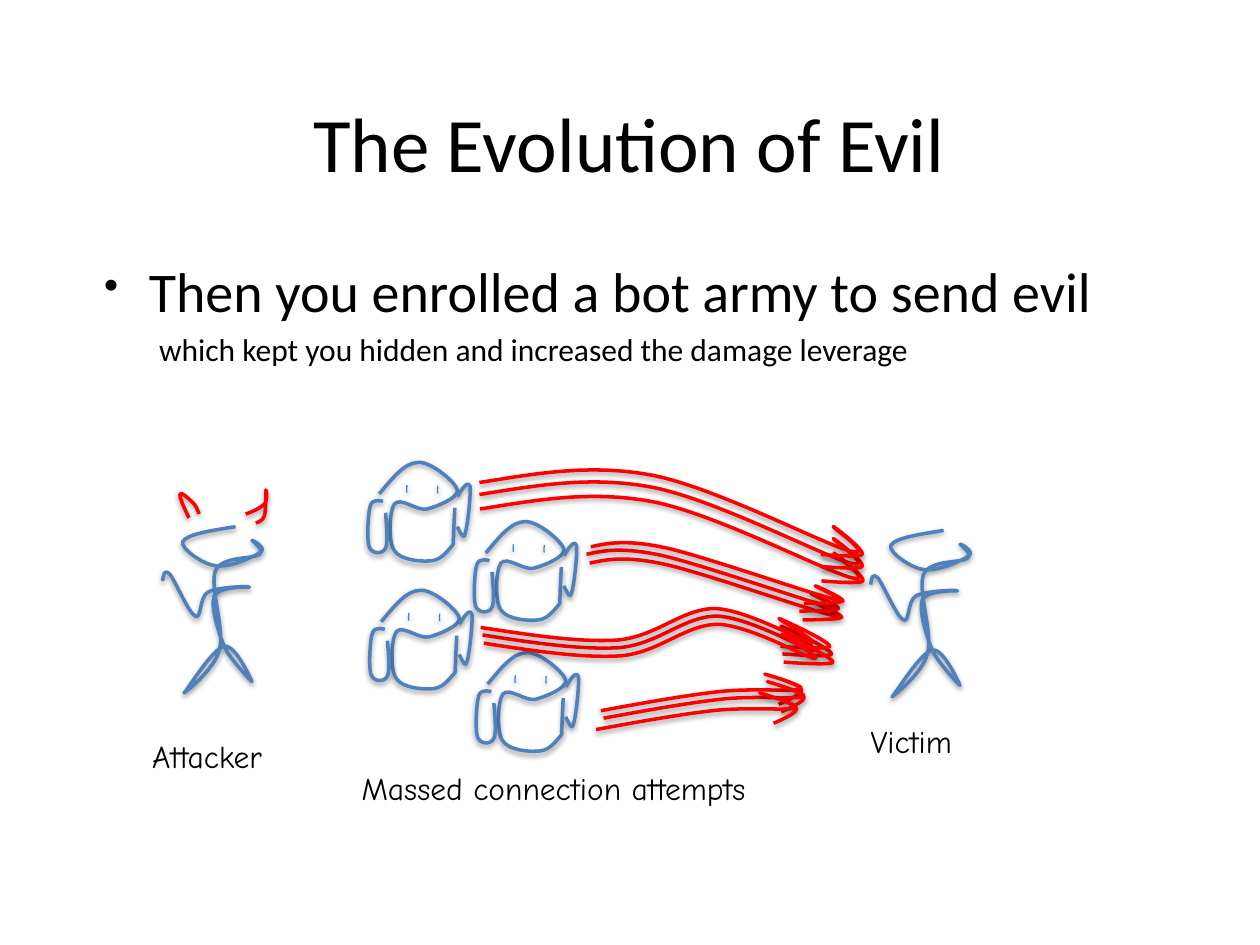
from dataclasses import dataclass

from lxml import etree
from pptx import Presentation
from pptx import util as u
from pptx.dml.color import RGBColor
from pptx.enum import text
from pptx.oxml import ns


@dataclass(frozen=True)
class Theme:
    ink: RGBColor = RGBColor(0, 0, 0)
    figure: RGBColor = RGBColor(0x4F, 0x81, 0xBD)
    eye: RGBColor = RGBColor(0x4B, 0x7E, 0xBC)
    evil: RGBColor = RGBColor(0xFF, 0, 0)
    sans: str = "Calibri"
    hand: str = "Comic Neue"
    title: int = 44
    body: int = 32
    small: int = 18
    pen: float = 2
    thin: float = 0.75


THEME = Theme()
GRID = u.Cm(0.0254)  # sketch coordinates count in this step
CURVE_STEPS = 10

# Each stroke is a start point followed by cubic curves of three points.
PERSON = [
    (187, 418), (168, 421), (148, 424), (145, 430), (143, 435), (161, 448), (171, 449),
    (181, 451), (202, 442), (207, 438), (212, 435), (200, 428), (200, 429),
    (200, 429), (210, 436), (206, 440), (201, 444), (176, 441), (171, 453),
    (166, 466), (179, 500), (174, 516), (170, 532), (146, 550), (146, 550),
    (147, 550), (169, 514), (178, 513), (187, 511), (200, 541), (200, 541),
    (200, 541), (183, 524), (178, 513), (173, 501), (167, 481), (170, 473),
    (174, 465), (199, 466), (198, 466), (197, 465), (172, 466), (165, 470),
    (158, 474), (160, 492), (155, 489), (150, 487), (139, 461), (135, 456),
    (130, 451), (130, 456), (129, 461)]
HORNS = [
    [(150, 411), (146, 403), (142, 394), (143, 392), (144, 390), (151, 397), (154, 400),
     (156, 402), (158, 408), (158, 408)],
    [(195, 408), (201, 406), (207, 403), (210, 400), (213, 396), (211, 387), (211, 389),
     (211, 391), (211, 405), (210, 409), (209, 414), (203, 415), (203, 415)]]
BOT = [
    [(301, 392), (311, 380), (321, 367), (332, 367), (342, 366), (362, 383), (363, 389),
     (364, 395), (347, 402), (339, 404), (331, 406), (318, 394), (313, 400),
     (309, 406), (308, 430), (313, 437), (318, 445), (336, 446), (343, 445),
     (351, 444), (356, 436), (359, 433), (361, 430), (359, 431), (360, 426),
     (360, 421), (361, 403), (361, 403)],
    [(306, 407), (307, 419), (308, 431), (306, 435), (304, 440), (295, 440), (293, 434),
     (291, 429), (292, 407), (294, 401), (296, 395), (304, 398), (304, 398)],
    [(363, 394), (367, 388), (371, 381), (373, 386), (374, 391), (371, 419), (369, 424),
     (368, 430), (363, 418), (363, 418)]]
EYE = [(323, 385), (323, 385), (322.5, 391), (323, 391)]
EYE_OFFSETS = [(0, 0), (24.5, 0.5)]
BOT_OFFSETS = [(0, 0), (1.5, 101.5), (84.5, 47), (86, 151)]

# Each volley: the stroke of one arrow, then the offsets of all its arrows.
VOLLEYS = [
    ([(381, 404), (425, 397), (468, 389), (517, 398), (566, 407), (650, 451), (674, 458),
      (698, 465), (660, 439), (662, 439), (664, 440), (686, 457), (685, 461),
      (683, 464), (652, 461), (652, 461)],
     [(0, 0), (-0.5, -11.5), (-0.5, -21)]),
    ([(468, 447), (482, 444), (496, 441), (528, 448), (559, 455), (639, 483), (659, 488),
      (679, 493), (645, 478), (646, 478), (647, 478), (669, 488), (668, 490),
      (666, 492), (637, 492), (637, 492)],
     [(0, 0), (-2.5, -7), (1, -13)]),
    ([(383, 504), (422, 510), (461, 516), (492, 514), (523, 511), (543, 489), (569, 489),
      (594, 490), (636, 514), (645, 516), (654, 517), (618, 497), (620, 497),
      (623, 498), (660, 515), (660, 519), (660, 522), (621, 519), (621, 519)],
     [(0, 0), (-1.5, -6), (1, 6.5)]),
    ([(477, 564), (510, 558), (543, 552), (570, 549), (596, 546), (629, 549), (635, 547),
      (642, 545), (607, 535), (607, 535), (607, 535), (635, 543), (636, 547),
      (638, 551), (618, 559), (618, 559)],
     [(0, 0), (2, 6), (-4, 15)]),
]


def set_all(target, values):
    for name, value in values.items():
        setattr(target, name, value)


def find_extent(points):
    """Return the top left and bottom right corners of a chain of cubic curves."""
    reached = []
    for i in range(0, len(points) - 1, 3):
        for step in range(CURVE_STEPS + 1):
            t = step / CURVE_STEPS
            weights = ((1 - t) ** 3, 3 * t * (1 - t) ** 2, 3 * t * t * (1 - t), t ** 3)
            reached.append([sum(w * c[axis] for w, c in zip(weights, points[i:i + 4]))
                            for axis in (0, 1)])
    return [[round(pick(values)) for values in zip(*reached)] for pick in (min, max)]


def add_soft_shadow(shape):
    shape.shadow.inherit = False
    effects = shape._element.spPr.find(ns.qn("a:effectLst"))
    shadow = etree.SubElement(effects, ns.qn("a:outerShdw"), blurRad="40000",
                              dist="20000", dir="5400000", rotWithShape="0")
    colour = etree.SubElement(shadow, ns.qn("a:srgbClr"), val="000000")
    etree.SubElement(colour, ns.qn("a:alpha"), val="38000")


def draw_curves(stroke, points, corner):
    """Replace the straight outline of a freeform by cubic curves."""
    outline = next(stroke._element.iter(ns.qn("a:path")))
    for command in list(outline):
        outline.remove(command)
    groups = [("a:moveTo", points[:1])]
    groups += [("a:cubicBezTo", points[i:i + 3]) for i in range(1, len(points), 3)]
    for tag, group in groups:
        command = etree.SubElement(outline, ns.qn(tag))
        for x, y in group:
            etree.SubElement(command, ns.qn("a:pt"), x=str(round(x - corner[0])),
                             y=str(round(y - corner[1])))


def add_stroke(owner, sketch, colour, offset=(0, 0), width=THEME.pen):
    points = [((x + offset[0]) * GRID, (y + offset[1]) * GRID) for x, y in sketch]
    corner, far_corner = find_extent(points)
    builder = owner.build_freeform(*corner)
    builder.add_line_segments([far_corner], close=False)
    stroke = builder.convert_to_shape()
    draw_curves(stroke, points, corner)
    stroke.fill.background()
    stroke.line.color.rgb = colour
    stroke.line.width = u.Pt(width)
    add_soft_shadow(stroke)


def add_bot(page, offset):
    bot = page.shapes.add_group_shape().shapes
    for sketch in BOT:
        add_stroke(bot, sketch, THEME.figure, offset)
    for dx, dy in EYE_OFFSETS:
        add_stroke(bot, EYE, THEME.eye, (offset[0] + dx, offset[1] + dy), THEME.thin)


def add_box(page, left, top, width, height, **frame_format):
    box = page.shapes.add_textbox(u.Cm(left), u.Cm(top), u.Cm(width), u.Cm(height))
    set_all(box.text_frame, {"word_wrap": True, **frame_format})
    return box.text_frame


def write(para, words, size, font=THEME.sans, **para_format):
    set_all(para, para_format)
    span = para.add_run()
    span.text = words
    set_all(span.font, {"size": u.Pt(size), "name": font})
    span.font.color.rgb = THEME.ink


def set_indent(para, margin, hanging=0, bullet=None):
    props = para._p.get_or_add_pPr()
    props.set("marL", str(u.Cm(margin)))
    props.set("indent", str(-u.Cm(hanging)))
    if bullet:
        etree.SubElement(props, ns.qn("a:buSzPct"), val="75000")
        etree.SubElement(props, ns.qn("a:buChar"), char=bullet)


def add_heading(page):
    frame = add_box(page, 1.85, 0.79, 21.67, 4.14, vertical_anchor=text.MSO_ANCHOR.MIDDLE)
    write(frame.paragraphs[0], "The Evolution of Evil", THEME.title,
          alignment=text.PP_ALIGN.CENTER)


def add_body(page):
    frame = add_box(page, 1.85, 5.05, 21.67, 12.27)
    point = frame.paragraphs[0]
    write(point, "Then you enrolled a bot army to send evil", THEME.body,
          space_before=u.Pt(6.4))
    set_indent(point, 0.9, 0.9, "•")
    detail = frame.add_paragraph()
    write(detail, "which kept you hidden and increased the damage leverage", THEME.small,
          level=1, space_before=u.Pt(3.6))
    set_indent(detail, 1.11)


def add_label(page, words, *place):
    frame = add_box(page, *place, word_wrap=False,
                    auto_size=text.MSO_AUTO_SIZE.SHAPE_TO_FIT_TEXT)
    write(frame.paragraphs[0], words, THEME.small, THEME.hand)


def main():
    deck = Presentation()
    set_all(deck, {"slide_width": u.Cm(25.4), "slide_height": u.Cm(19.05)})
    page = deck.slides.add_slide(deck.slide_layouts[6])
    add_heading(page)
    add_body(page)
    add_stroke(page.shapes, PERSON, THEME.figure)
    for horn in HORNS:
        add_stroke(page.shapes, horn, THEME.evil)
    add_stroke(page.shapes, PERSON, THEME.figure, (562, 3))
    add_label(page, "Attacker", 2.82, 14.73, 3.25, 0.94)
    add_label(page, "Victim", 17.3, 14.43, 2.57, 0.94)
    for offset in BOT_OFFSETS:
        add_bot(page, offset)
    for arrow, offsets in VOLLEYS:
        for offset in offsets:
            add_stroke(page.shapes, arrow, THEME.evil, offset)
    add_label(page, "Massed connection attempts", 7.04, 15.37, 9.58, 1.02)
    deck.save("out.pptx")


if __name__ == "__main__":
    main()
